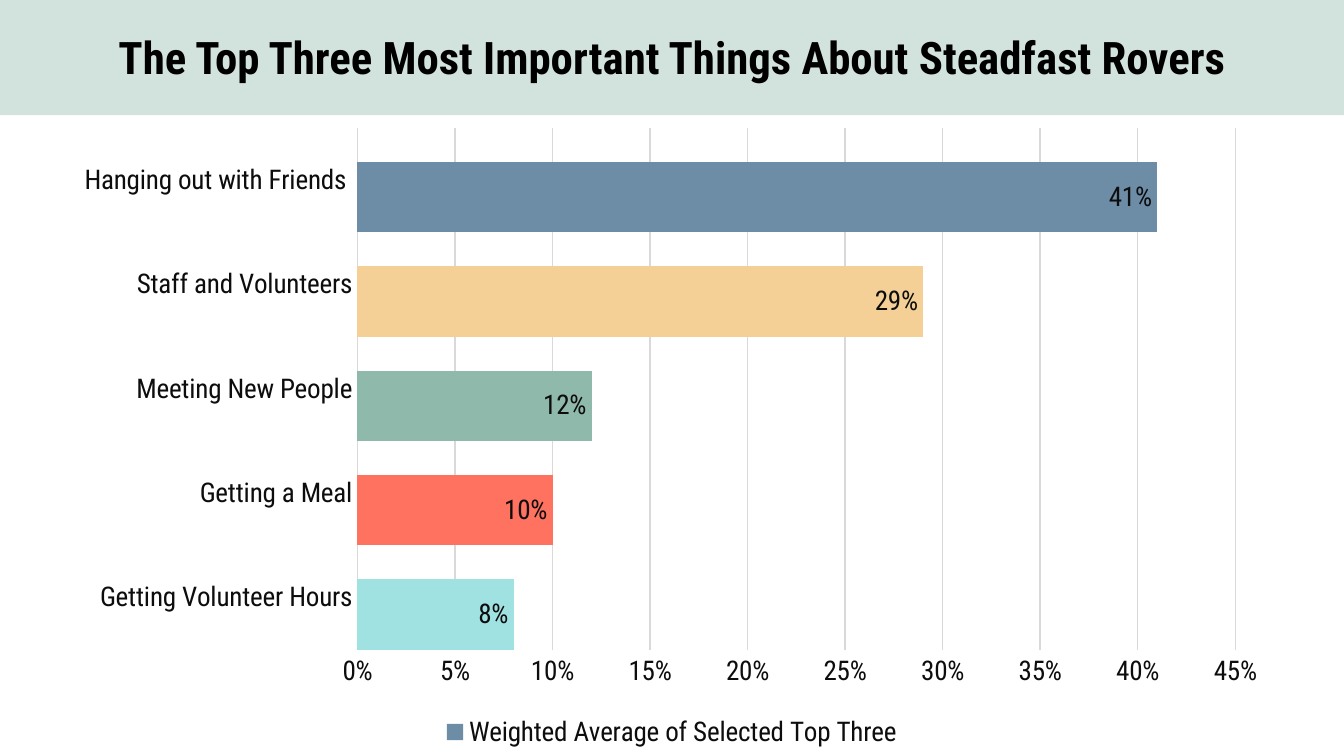
from dataclasses import dataclass

from lxml import etree
from pptx import Presentation
from pptx import util as u
from pptx.chart import data as chart_data
from pptx.dml.color import RGBColor
from pptx.enum import chart as ch
from pptx.enum import shapes, text
from pptx.oxml.ns import qn


@dataclass(frozen=True)
class Theme:
    font: str = "Roboto Condensed"
    title_size: float = 24
    chart_size: float = 14.5
    banner: str = "D2E3DD"
    title: str = "000000"
    label: str = "0D0D0D"
    grid: str = "D9D9D9"
    series: tuple = ("6D8DA7", "A0E2E2", "8FB9AB")
    bars: tuple = ("A0E2E2", "FF7260", "8FB9AB", "F4D096", "6D8DA7")


class SlideBuilder:
    """Adds themed elements, measured in points, to one slide."""

    def __init__(self, slide, theme):
        self.slide = slide
        self.theme = theme

    def style_font(self, font, size, color, bold=False):
        font.name = self.theme.font
        font.size = u.Pt(size)
        font.bold = bold
        font.color.rgb = RGBColor.from_string(color)

    def paint(self, fill, color):
        fill.solid()
        fill.fore_color.rgb = RGBColor.from_string(color)

    def add_banner(self, *box):
        banner = self.slide.shapes.add_shape(shapes.MSO_SHAPE.RECTANGLE, *map(u.Pt, box))
        banner.shadow.inherit = False
        self.paint(banner.fill, self.theme.banner)
        banner.line.fill.background()

    def add_title(self, wording, *box):
        frame = self.slide.shapes.add_textbox(*map(u.Pt, box)).text_frame
        frame.word_wrap = True
        frame.auto_size = text.MSO_AUTO_SIZE.SHAPE_TO_FIT_TEXT
        heading = frame.paragraphs[0]
        heading.text = wording
        heading.alignment = text.PP_ALIGN.CENTER
        self.style_font(heading.font, self.theme.title_size, self.theme.title, True)

    def add_bar_chart(self, answers, series_names, plot_box, *box):
        theme = self.theme
        survey = chart_data.CategoryChartData(number_format="0%")
        survey.categories = list(answers)
        shares = list(answers.values())
        for index, name in enumerate(series_names):
            survey.add_series(name, shares if index == 0 else [None] * len(shares))
        chart = self.slide.shapes.add_chart(
            ch.XL_CHART_TYPE.BAR_CLUSTERED, *map(u.Pt, box), survey).chart
        chart.has_title = False
        self.style_font(chart.font, theme.chart_size, theme.label)

        plot = chart.plots[0]
        plot.vary_by_categories = False
        plot.gap_width = 0
        plot.overlap = 76
        for series, color in zip(plot.series, theme.series):
            self.paint(series.format.fill, color)
        shares_series = plot.series[0]
        for index, color in enumerate(theme.bars):
            self.paint(shares_series.points[index].format.fill, color)
        labels = shares_series.data_labels
        labels.show_value = True
        labels.position = ch.XL_LABEL_POSITION.INSIDE_END
        labels.number_format = "0%"
        labels.number_format_is_linked = False
        self.style_font(labels.font, theme.chart_size, theme.label)

        self.style_axes(chart)
        self.place_plot(chart, plot_box, box[2:])
        self.add_legend(chart, hidden=(0, 1))

    def style_axes(self, chart):
        theme = self.theme
        answers, shares = chart.category_axis, chart.value_axis
        for axis in (answers, shares):
            axis.major_tick_mark = axis.minor_tick_mark = ch.XL_TICK_MARK.NONE
            self.style_font(axis.tick_labels.font, theme.chart_size, theme.label)
        shares.minimum_scale, shares.maximum_scale, shares.major_unit = 0, 0.45, 0.05
        shares.tick_labels.number_format = "0%"
        shares.tick_labels.number_format_is_linked = False
        shares.has_major_gridlines = True
        shares.format.line.fill.background()
        for line in (answers.format.line, shares.major_gridlines.format.line):
            line.width = u.Pt(0.75)
            line.color.rgb = RGBColor.from_string(theme.grid)

    def place_plot(self, chart, plot_box, chart_size):
        area = chart.element.find(".//" + qn("c:plotArea"))
        for automatic in area.findall(qn("c:layout")):
            area.remove(automatic)
        layout = etree.Element(qn("c:layout"))
        area.insert(0, layout)
        manual = etree.SubElement(layout, qn("c:manualLayout"))
        settings = [("layoutTarget", "inner"), ("xMode", "edge"), ("yMode", "edge")]
        fractions = [length / whole for length, whole in zip(plot_box, chart_size * 2)]
        for tag, value in settings + list(zip("xywh", fractions)):
            etree.SubElement(manual, qn(f"c:{tag}"), val=str(value))

    def add_legend(self, chart, hidden):
        chart.has_legend = True
        legend = chart.legend
        legend.position = ch.XL_LEGEND_POSITION.BOTTOM
        legend.include_in_layout = False
        self.style_font(legend.font, self.theme.chart_size, self.theme.label)
        element = chart.element.find(".//" + qn("c:legend"))
        for place, index in enumerate(hidden, start=1):
            entry = etree.Element(qn("c:legendEntry"))
            etree.SubElement(entry, qn("c:idx"), val=str(index))
            etree.SubElement(entry, qn("c:delete"), val="1")
            element.insert(place, entry)


def main():
    deck = Presentation()
    deck.slide_width, deck.slide_height = u.Pt(720), u.Pt(405)
    builder = SlideBuilder(deck.slides.add_slide(deck.slide_layouts[6]), Theme())
    builder.add_banner(0, -2, 720, 63.75)
    builder.add_title("The Top Three Most Important Things About Steadfast Rovers",
                      0, 12.25, 720, 36)
    answers = {
        "Getting Volunteer Hours": 0.08,
        "Getting a Meal": 0.10,
        "Meeting New People": 0.12,
        "Staff and Volunteers": 0.29,
        "Hanging out with Friends ": 0.41,
    }
    series_names = ("Weighted Average of Selected Top Three", "Series 2", "Column2")
    builder.add_bar_chart(answers, series_names, (159, 6.7, 470.3, 279.4),
                          32.5, 62, 654.5, 341.75)
    deck.save("out.pptx")


if __name__ == "__main__":
    main()
